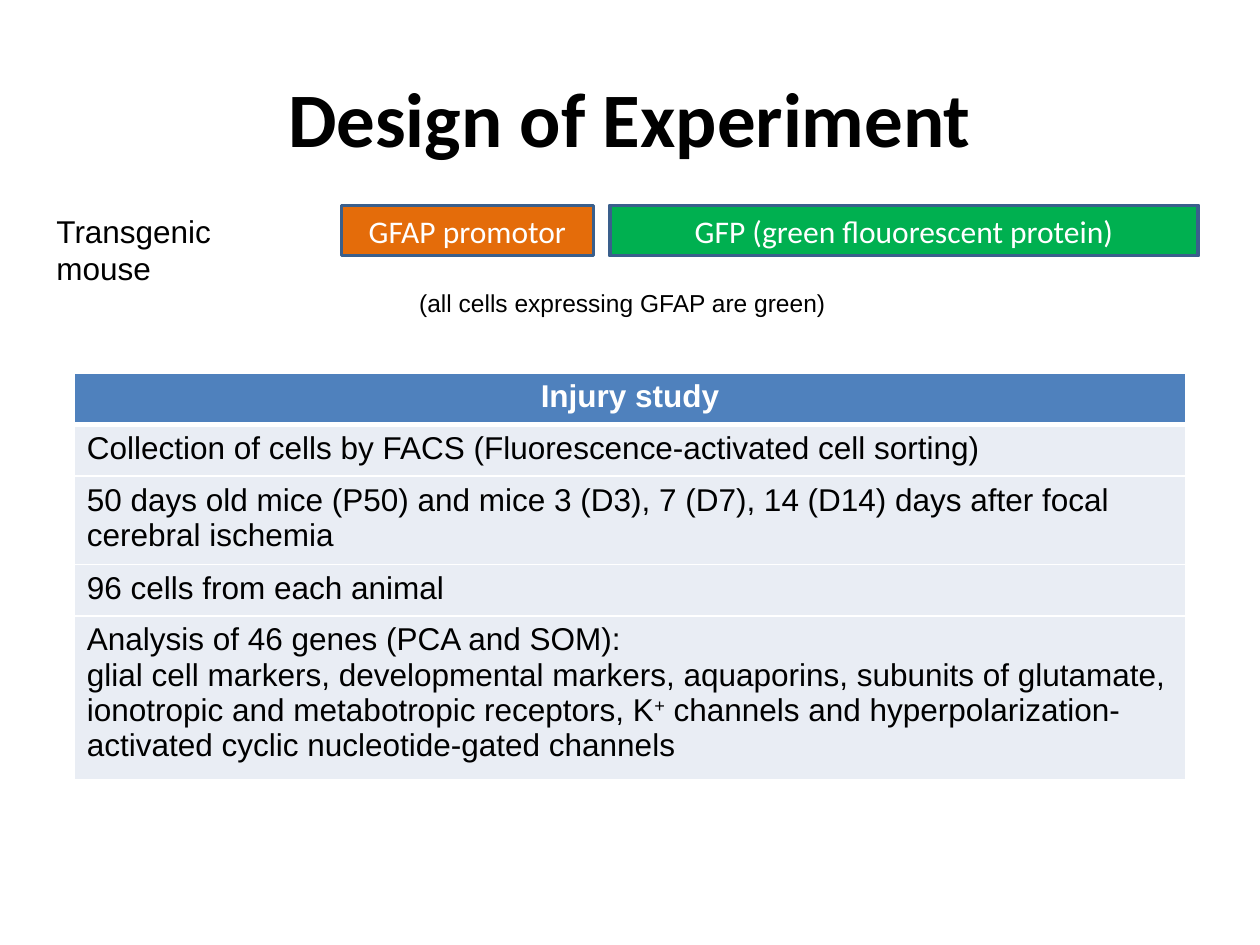
from dataclasses import dataclass

from lxml.etree import SubElement
from pptx import Presentation
from pptx.dml.color import RGBColor
from pptx.enum.shapes import MSO_SHAPE as SHAPE
from pptx.enum.text import MSO_ANCHOR as ANCHOR, PP_ALIGN as ALIGN
from pptx.oxml.ns import qn
from pptx.util import Inches, Pt


@dataclass(frozen=True)
class Theme:
    black: str = "000000"
    white: str = "FFFFFF"
    orange: str = "E46C0A"
    green: str = "00B050"
    outline: str = "3A5F8C"
    header: str = "4F81BD"
    row: str = "E9EDF4"
    heading_font: str = "Calibri"
    body_font: str = "Arial"
    title_size: int = 44
    body_size: int = 18
    note_size: int = 14


T = Theme()
HEADER = "Injury study"
# Each row: its height and its paragraphs; a tuple is text, superscript, text
STEPS = [
    (0.41, ["Collection of cells by FACS (Fluorescence-activated cell sorting)"]),
    (0.7, ["50 days old mice (P50) and mice 3 (D3), 7 (D7), 14 (D14) days "
           "after focal cerebral ischemia"]),
    (0.41, ["96 cells from each animal"]),
    (1.29, ["Analysis of 46 genes (PCA and SOM):",
            ("glial cell markers, developmental markers, aquaporins, subunits of "
             "glutamate, ionotropic and metabotropic receptors, K", "+",
             " channels and hyperpolarization-activated cyclic nucleotide-gated "
             "channels")]),
]


def rgb(color):
    return RGBColor.from_string(color)


def add_text(p, text, size=T.body_size, font=T.body_font, color=T.black,
             bold=False, align=ALIGN.LEFT):
    p.alignment = align
    parts = (text,) if isinstance(text, str) else text
    for i, part in enumerate(parts):
        r = p.add_run()
        r.text = part
        r.font.size, r.font.name, r.font.bold = Pt(size), font, bold
        r.font.color.rgb = rgb(color)
        if i % 2:
            r.font._element.set("baseline", "30000")


def add_title(s, text):
    title = s.shapes.title
    title.left, title.top = Inches(0.5), Inches(0.3)
    title.width, title.height = Inches(9), Inches(1.25)
    tf = title.text_frame
    tf.vertical_anchor = ANCHOR.MIDDLE
    add_text(tf.paragraphs[0], text, size=T.title_size, font=T.heading_font,
             bold=True, align=ALIGN.CENTER)


def add_label(s, text, x, y, w, h, wrap=True, **fmt):
    tf = s.shapes.add_textbox(Inches(x), Inches(y), Inches(w), Inches(h)).text_frame
    tf.word_wrap = wrap
    add_text(tf.paragraphs[0], text, **fmt)


def add_gene_box(s, text, x, w, fill):
    sp = s.shapes.add_shape(SHAPE.RECTANGLE, Inches(x), Inches(1.63),
                            Inches(w), Inches(0.4))
    sp.shadow.inherit = False
    sp.fill.solid()
    sp.fill.fore_color.rgb = rgb(fill)
    sp.line.color.rgb = rgb(T.outline)
    sp.line.width = Pt(2)
    tf = sp.text_frame
    tf.word_wrap = True
    tf.vertical_anchor = ANCHOR.MIDDLE
    add_text(tf.paragraphs[0], text, font=T.heading_font, color=T.white,
             align=ALIGN.CENTER)


def style_cell(cell, fill, top, bottom):
    tcPr = cell._tc.get_or_add_tcPr()
    for side, width in (("L", 1), ("R", 1), ("T", top), ("B", bottom)):
        ln = SubElement(tcPr, qn(f"a:ln{side}"), w=str(Pt(width)))
        SubElement(SubElement(ln, qn("a:solidFill")), qn("a:srgbClr"), val=T.white)
    cell.fill.solid()
    cell.fill.fore_color.rgb = rgb(fill)


def add_study_table(s, x, y, w):
    rows = [(0.41, [HEADER])] + STEPS
    total = sum(h for h, _ in rows)
    table = s.shapes.add_table(len(rows), 1, Inches(x), Inches(y),
                               Inches(w), Inches(total)).table
    for i, (height, paragraphs) in enumerate(rows):
        table.rows[i].height = Inches(height)
        cell = table.cell(i, 0)
        style_cell(cell, T.row if i else T.header,
                   top=3 if i == 1 else 1, bottom=1 if i else 3)
        fmt = {} if i else dict(color=T.white, bold=True, align=ALIGN.CENTER)
        tf = cell.text_frame
        for j, text in enumerate(paragraphs):
            p = tf.add_paragraph() if j else tf.paragraphs[0]
            add_text(p, text, **fmt)


def main():
    prs = Presentation()
    prs.slide_width, prs.slide_height = Inches(10), Inches(7.5)
    s = prs.slides.add_slide(prs.slide_layouts[5])
    add_title(s, "Design of Experiment")

    # Transgene construct
    add_label(s, "Transgenic mouse", 0.35, 1.63, 2.04, 0.4)
    add_gene_box(s, "GFAP promotor", 2.71, 2, T.orange)
    add_gene_box(s, "GFP (green flouorescent protein)", 4.84, 4.67, T.green)
    add_label(s, "(all cells expressing GFAP are green)", 3.22, 2.24, 3.44, 0.34,
              wrap=False, size=T.note_size, align=ALIGN.CENTER)

    # Study steps
    add_study_table(s, 0.59, 2.96, 8.82)
    prs.save("out.pptx")


if __name__ == "__main__":
    main()
